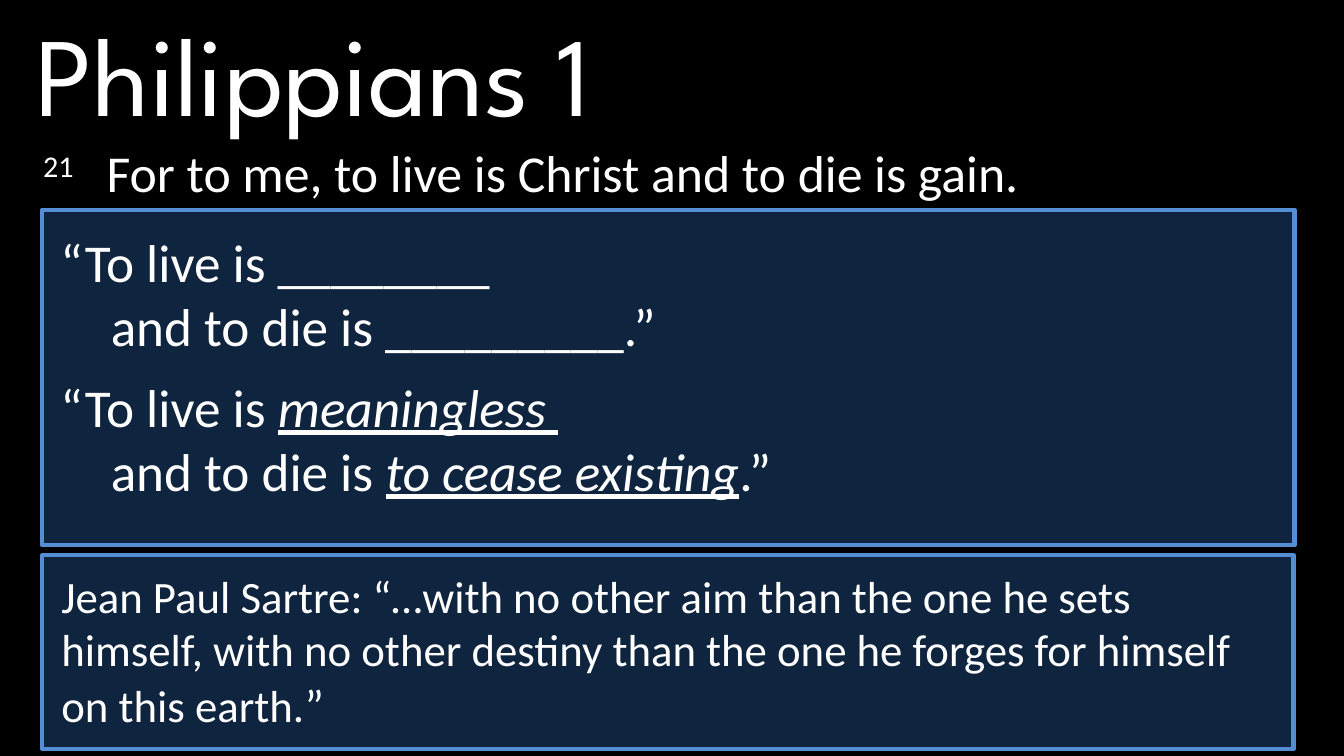
from pptx import Presentation
from pptx.dml.color import RGBColor
from pptx.enum import shapes, text
from pptx.util import Inches, Pt

WHITE, NAVY, BLUE, BLACK = "FFFFFF", "0F243E", "558ED5", "000000"


def rgb(value):
    return RGBColor.from_string(value)


def add_text(slide, box, size, font="Calibri"):
    """Add a wrapping text box and return its frame and first paragraph."""
    tf = slide.shapes.add_textbox(*map(Inches, box)).text_frame
    tf.word_wrap = True
    tf.auto_size = text.MSO_AUTO_SIZE.SHAPE_TO_FIT_TEXT
    p = tf.paragraphs[0]
    style(p, size, font)
    return tf, p


def style(p, size, font="Calibri"):
    p.font.size = Pt(size)
    p.font.name = font
    p.font.color.rgb = rgb(WHITE)


def add_run(p, words):
    r = p.add_run()
    r.text = words
    return r


def indent(p, left, first=0):
    pPr = p._p.get_or_add_pPr()
    pPr.set("marL", str(Inches(left)))
    pPr.set("indent", str(Inches(first)))


def add_panel(slide, box):
    sp = slide.shapes.add_shape(shapes.MSO_SHAPE.RECTANGLE, *map(Inches, box))
    sp.shadow.inherit = False
    sp.fill.solid()
    sp.fill.fore_color.rgb = rgb(NAVY)
    sp.line.color.rgb = rgb(BLUE)
    sp.line.width = Pt(3)


def add_title(slide, box):
    tf, p = add_text(slide, box, 80, "League Spartan")
    add_run(p, "Philippians 1")


def add_verse(slide, box):
    tf, p = add_text(slide, box, 37)
    p.line_spacing = 0.9
    indent(p, 0.63, -0.63)
    number = add_run(p, "21\u00a0\t")
    number._r.get_or_add_rPr().set("baseline", "30000")
    add_run(p, "For to me, to live is Christ and to die is gain.")


def add_sayings(slide, box):
    x, y, w, h = box
    add_panel(slide, box)
    tf, p = add_text(slide, (x + 0.08, y + 0.15, w - 0.17, h - 0.5), 38)
    # Left indent, space after, opening words, answer, closing words
    lines = [
        (0, 0, "“To live is ________", "", ""),
        (0.5, 12, "and to die is _________.”", "", ""),
        (0, 0, "“To live is ", "meaningless ", ""),
        (0.5, 0, "and to die is ", "to cease existing", ".”"),
    ]
    for i, (left, after, opening, answer, closing) in enumerate(lines):
        if i:
            p = tf.add_paragraph()
            style(p, 38)
        indent(p, left)
        p.space_after = Pt(after)
        add_run(p, opening)
        if answer:
            r = add_run(p, answer)
            r.font.italic = r.font.underline = True
        if closing:
            add_run(p, closing)


def add_quote(slide, box):
    x, y, w, h = box
    add_panel(slide, box)
    tf, p = add_text(slide, (x + 0.09, y + 0.08, w - 0.17, h - 0.19), 32)
    p.space_after = Pt(3)
    add_run(p, "Jean Paul Sartre: “…with no other aim than the one he sets "
               "himself, with no other destiny than the one he forges for "
               "himself on this earth.")
    add_run(p, "”").font.size = Pt(33)


def main():
    prs = Presentation()
    prs.slide_width, prs.slide_height = Inches(13.33), Inches(7.5)
    slide = prs.slides.add_slide(prs.slide_layouts[6])
    slide.background.fill.solid()
    slide.background.fill.fore_color.rgb = rgb(BLACK)

    add_verse(slide, (0.33, 1.42, 11.33, 0.66))
    add_title(slide, (0.25, 0, 12, 1.45))
    add_sayings(slide, (0.42, 2.08, 12.42, 3.33))
    add_quote(slide, (0.42, 5.51, 12.41, 1.92))
    prs.save("out.pptx")


if __name__ == "__main__":
    main()
